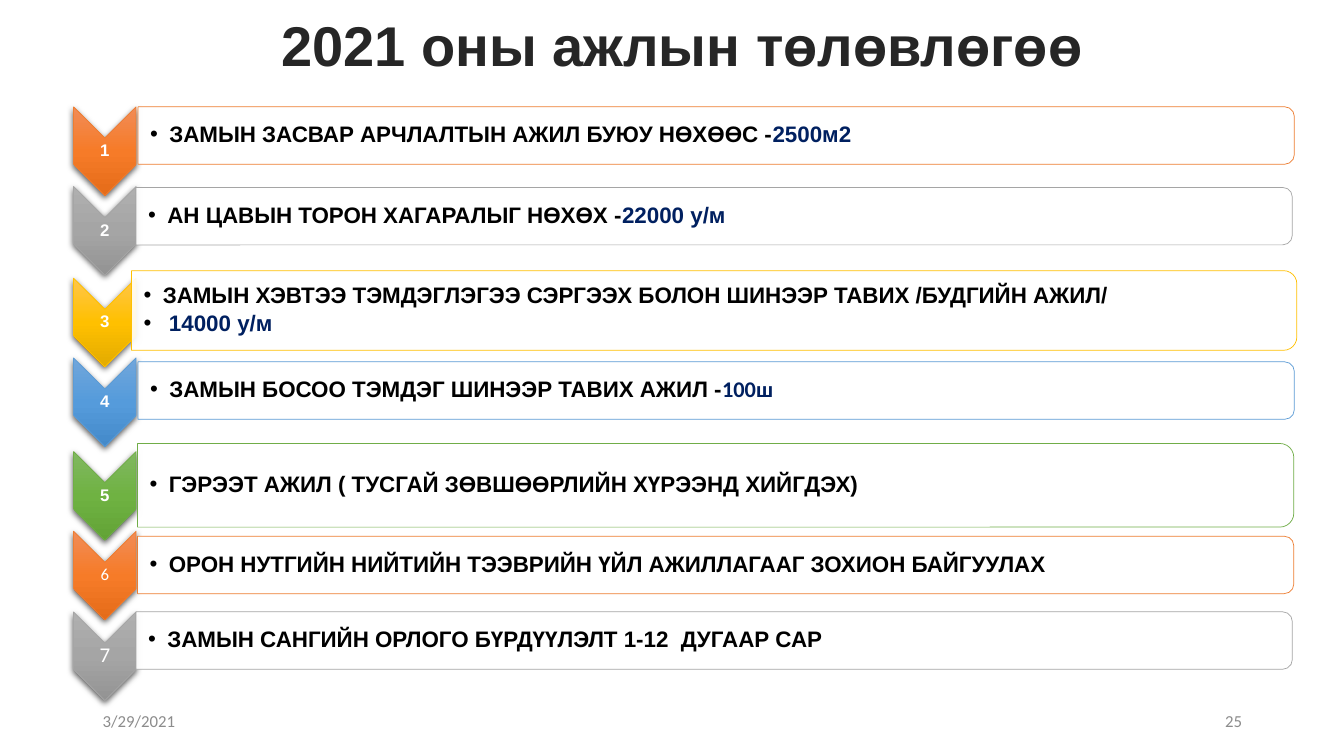
from dataclasses import dataclass

from pptx import Presentation
from pptx.dml.color import RGBColor
from pptx.enum.shapes import MSO_SHAPE
from pptx.enum.text import MSO_ANCHOR, MSO_AUTO_SIZE, PP_ALIGN
from pptx.oxml import parse_xml
from pptx.oxml.ns import nsdecls, qn
from pptx.util import Inches, Pt

CHEVRON = MSO_SHAPE.CHEVRON
ROUND_TOP = MSO_SHAPE.ROUND_2_SAME_RECTANGLE
MIDDLE, TOP = MSO_ANCHOR.MIDDLE, MSO_ANCHOR.TOP
LEFT, CENTER, RIGHT = PP_ALIGN.LEFT, PP_ALIGN.CENTER, PP_ALIGN.RIGHT
GROW = MSO_AUTO_SIZE.SHAPE_TO_FIT_TEXT

# Grid of 0.1 inch cells
CELL = Inches(0.1)
COLUMNS, ROWS = 133.33, 75
CHEVRON_COLUMN, CHEVRON_WIDTH, CHEVRON_HEIGHT = 10.4, 6.2, 8.8
CORNER_INSET = 0.05  # share of bar height kept clear of text
WHITE, BLACK, NAVY, GRAY, DARK = "FFFFFF", "000000", "002060", "8C8C8C", "262626"


@dataclass(frozen=True)
class Area:
    """Left, top, width and height in grid cells."""
    left: float
    top: float
    width: float
    height: float


@dataclass(frozen=True)
class Span:
    text: str
    color: str = BLACK
    font: str = "Arial"


@dataclass(frozen=True)
class Tone:
    line: str
    light: str
    middle: str
    dark: str


@dataclass(frozen=True)
class Task:
    tone: Tone
    chevron_row: float  # centre of the chevron
    bar_row: float  # centre of the bar
    bar_left: float
    lines: tuple[tuple[Span, ...], ...]
    bar_height: float = 5.7
    bar_width: float = 114.7
    number_font: str = "Arial"
    number_size: int = 12


ORANGE = Tone("ED7D31", "F18C57", "F67B28", "E56C19")
SILVER = Tone("A5A5A5", "AFAFAF", "A5A5A5", "939393")
GOLD = Tone("FFC000", "FFC64B", "FFC000", "E3AB00")
BLUE = Tone("5B9BD5", "71A6DB", "559BDB", "448ACA")
GREEN = Tone("70AD47", "81B861", "6FB242", "62A336")

TASKS = (
    Task(ORANGE, 15, 13.45, 13.7,
         ((Span("ЗАМЫН ЗАСВАР АРЧЛАЛТЫН АЖИЛ БУЮУ НӨХӨӨС -"), Span("2500м2", NAVY)),)),
    Task(SILVER, 22.9, 21.45, 13.5,
         ((Span("АН ЦАВЫН ТОРОН ХАГАРАЛЫГ НӨХӨХ -"), Span("22000 у/м", NAVY)),)),
    Task(GOLD, 32, 30.8, 13.05,
         ((Span("ЗАМЫН ХЭВТЭЭ ТЭМДЭГЛЭГЭЭ СЭРГЭЭХ БОЛОН ШИНЭЭР ТАВИХ /БУДГИЙН АЖИЛ/"),),
          (Span(" "), Span("14000 у/м", NAVY))), bar_height=7.9, bar_width=115.6),
    Task(BLUE, 39.9, 38.75, 13.7,
         ((Span("ЗАМЫН БОСОО ТЭМДЭГ ШИНЭЭР ТАВИХ АЖИЛ -"), Span("100ш", NAVY, "Calibri")),)),
    Task(GREEN, 49.2, 48.15, 13.65,
         ((Span("ГЭРЭЭТ АЖИЛ ( ТУСГАЙ ЗӨВШӨӨРЛИЙН ХҮРЭЭНД ХИЙГДЭХ)"),),), bar_height=8.3),
    Task(ORANGE, 57.1, 56.05, 13.65,
         ((Span("ОРОН НУТГИЙН НИЙТИЙН ТЭЭВРИЙН ҮЙЛ АЖИЛЛАГААГ ЗОХИОН БАЙГУУЛАХ"),),),
         number_font="Calibri"),
    Task(SILVER, 65.1, 63.55, 13.5,
         ((Span("ЗАМЫН САНГИЙН ОРЛОГО БҮРДҮҮЛЭЛТ 1-12  ДУГААР САР"),),),
         number_font="Calibri", number_size=15),
)


def cells(count: float) -> int:
    return round(count * CELL)


def color(value: str) -> RGBColor:
    return RGBColor.from_string(value)


def add_text(page, area: Area, lines, size: float, align=LEFT, anchor=MIDDLE,
             bold: bool = False, inset: tuple[float, float] | None = None):
    """Add a text box; inset is the left margin and the other three, in cells."""
    box = page.shapes.add_textbox(cells(area.left), cells(area.top),
                                  cells(area.width), cells(area.height))
    frame = box.text_frame
    frame.word_wrap = True
    frame.vertical_anchor = anchor
    if inset:
        frame.margin_left = cells(inset[0])
        frame.margin_top = frame.margin_right = frame.margin_bottom = cells(inset[1])
    for index, spans in enumerate(lines):
        para = frame.paragraphs[0] if index == 0 else frame.add_paragraph()
        para.alignment = align
        para.font.size = Pt(size)
        para.font.bold = bold
        for item in spans:
            span = para.add_run()
            span.text = item.text
            span.font.size = Pt(size)
            span.font.bold = bold
            span.font.name = item.font
            span.font.color.rgb = color(item.color)
    return box


def space_lines(box, after: float) -> None:
    for para in box.text_frame.paragraphs:
        para.line_spacing = 0.9
        para.space_after = Pt(after)


def add_bullets(box) -> None:
    for para in box.text_frame.paragraphs:
        properties = para._p.get_or_add_pPr()
        properties.set("marL", str(cells(1.9)))
        properties.set("indent", str(-cells(1.9)))
        properties.append(parse_xml(f'<a:buFont {nsdecls("a")} typeface="Arial"/>'))
        properties.append(parse_xml(f'<a:buChar {nsdecls("a")} char="•"/>'))


def add_turned_shape(page, kind, area: Area, line: str):
    """Add a shape turned a quarter so that it covers the given area."""
    shift = (area.width - area.height) / 2
    shape = page.shapes.add_shape(kind, cells(area.left + shift), cells(area.top - shift),
                                  cells(area.height), cells(area.width))
    shape.rotation = 90
    shape.shadow.inherit = False
    shape.line.color.rgb = color(line)
    shape.line.width = Pt(0.5)
    return shape


def add_chevron(page, task: Task, number: int) -> None:
    area = Area(CHEVRON_COLUMN - CHEVRON_WIDTH / 2, task.chevron_row - CHEVRON_HEIGHT / 2,
                CHEVRON_WIDTH, CHEVRON_HEIGHT)
    properties = add_turned_shape(page, CHEVRON, area, task.tone.line)._element.spPr
    # Vertical gradient and soft shadow, both fixed to the page
    shades = (task.tone.light, task.tone.middle, task.tone.dark)
    stops = "".join(f'<a:gs pos="{index * 50000}"><a:srgbClr val="{shade}"/></a:gs>'
                    for index, shade in enumerate(shades))
    properties.find(qn("a:prstGeom")).addnext(parse_xml(
        f'<a:gradFill {nsdecls("a")} rotWithShape="0"><a:gsLst>{stops}</a:gsLst>'
        '<a:lin ang="5400000" scaled="0"/></a:gradFill>'))
    properties.find(qn("a:effectLst")).append(parse_xml(
        f'<a:outerShdw {nsdecls("a")} blurRad="{Pt(4.5)}" dist="{Pt(1.5)}" dir="5400000" '
        'algn="ctr" rotWithShape="0"><a:srgbClr val="000000"><a:alpha val="63000"/>'
        '</a:srgbClr></a:outerShdw>'))
    label = Area(area.left, task.chevron_row - 1.3, CHEVRON_WIDTH, 2.6)
    box = add_text(page, label, ((Span(str(number), WHITE, task.number_font),),),
                   task.number_size, CENTER, bold=task.number_font == "Arial",
                   inset=(0.1, 0.1))
    space_lines(box, 4.2)


def add_bar(page, task: Task) -> None:
    area = Area(task.bar_left, task.bar_row - task.bar_height / 2,
                task.bar_width, task.bar_height)
    bar = add_turned_shape(page, ROUND_TOP, area, task.tone.line)
    bar.fill.solid()
    bar.fill.fore_color.rgb = color(WHITE)
    shade = bar._element.spPr.find(qn("a:solidFill")).find(qn("a:srgbClr"))
    shade.append(parse_xml(f'<a:alpha {nsdecls("a")} val="90000"/>'))
    inset = task.bar_height * CORNER_INSET
    label = Area(area.left, area.top + inset, area.width - inset, area.height - 2 * inset)
    box = add_text(page, label, task.lines, 16, bold=True, inset=(1.2, 0.1))
    space_lines(box, 2.4)
    add_bullets(box)


def add_title(page) -> None:
    box = add_text(page, Area(2, 0.6, 131.3, 7.7),
                   ((Span("2021 оны ажлын төлөвлөгөө", DARK),),), 40, CENTER, TOP, bold=True)
    box.text_frame.auto_size = GROW
    span = box.text_frame.paragraphs[0].runs[0]
    span._r.get_or_add_rPr().insert(0, parse_xml(
        f'<a:ln {nsdecls("a")} w="{Pt(1.06)}"><a:solidFill><a:srgbClr val="{WHITE}"/>'
        '</a:solidFill></a:ln>'))


def main() -> None:
    deck = Presentation()
    deck.slide_width, deck.slide_height = cells(COLUMNS), cells(ROWS)
    page = deck.slides.add_slide(deck.slide_layouts[6])
    # Footer
    for left, text, align in ((9.2, "3/29/2021", LEFT), (94.2, "25", RIGHT)):
        add_text(page, Area(left, 69.5, 30, 4), ((Span(text, GRAY, "Calibri"),),), 12, align)
    # Numbered tasks
    for number, task in enumerate(TASKS, 1):
        add_chevron(page, task, number)
        add_bar(page, task)
    add_title(page)
    deck.save("out.pptx")


if __name__ == "__main__":
    main()
